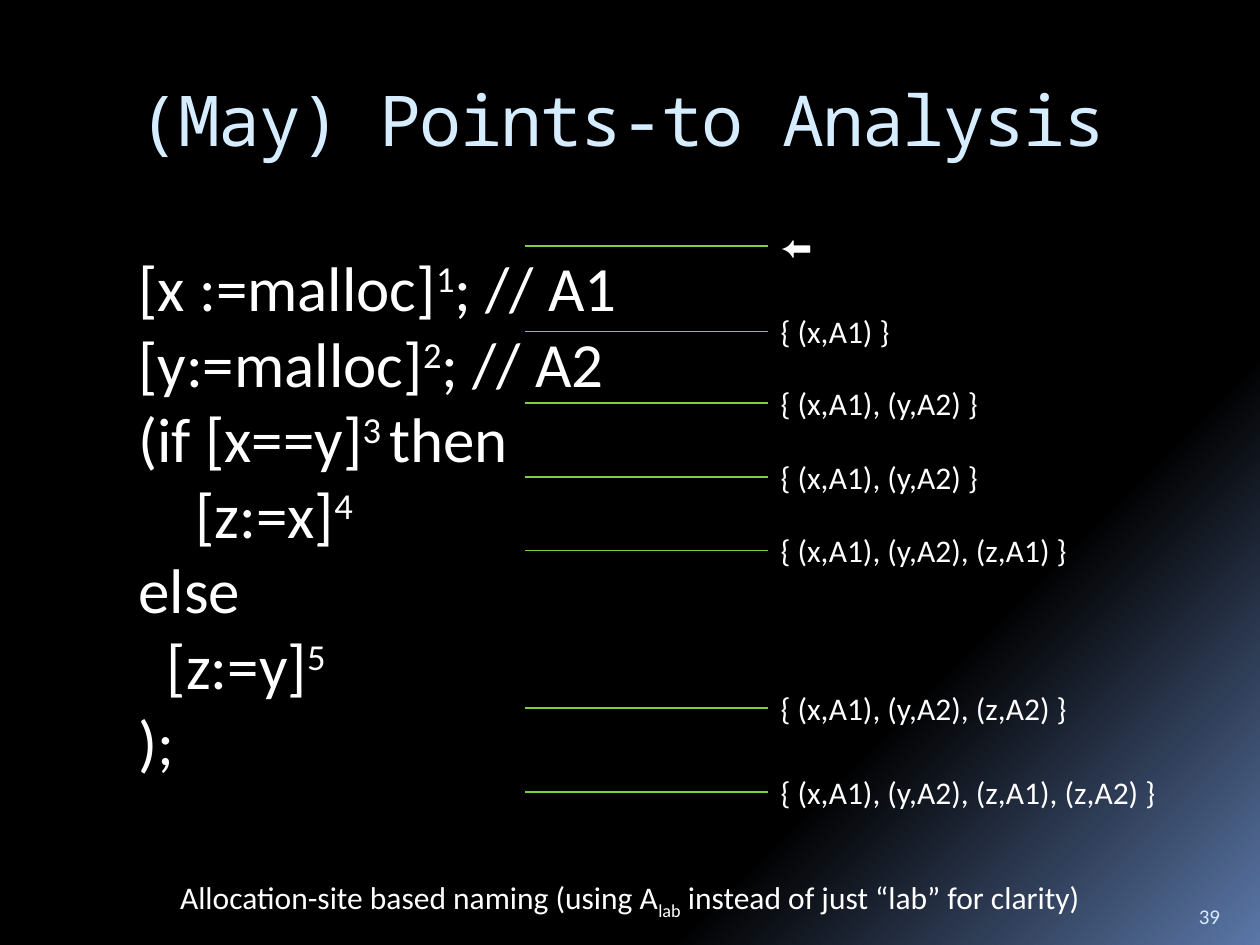
from pptx import Presentation
from pptx.dml.color import RGBColor
from pptx.enum.shapes import MSO_CONNECTOR as Connector
from pptx.enum.text import MSO_ANCHOR as Anchor, MSO_AUTO_SIZE as AutoSize
from pptx.oxml.ns import qn
from pptx.util import Pt
from lxml.etree import SubElement

WHITE, ICE, GREEN, BLACK, BLUE = "FFFFFF", "D6ECFF", "7FD13B", "000000", "5B77A8"
LINE_WIDTH = 139
LABEL_HEIGHT = 28.8


def color(value):
    return RGBColor.from_string(value)


def add_span(para, text, size=18, font="Calibri", fill=WHITE, baseline=0, spacing=0):
    span = para.add_run()
    span.text = text
    span.font.size = Pt(size)
    span.font.name = font
    span.font.color.rgb = color(fill)
    properties = span.font._element
    if baseline:
        properties.set("baseline", str(baseline * 1000))
    if spacing:
        properties.set("spc", str(spacing * 100))


def add_text(shapes, box, lines, wrap=True, grow=False, anchor=Anchor.TOP, **style):
    frame = shapes.add_textbox(*map(Pt, box)).text_frame
    frame.word_wrap = wrap
    frame.vertical_anchor = anchor
    frame.auto_size = AutoSize.SHAPE_TO_FIT_TEXT if grow else AutoSize.NONE
    for index, (indent, spans) in enumerate(lines):
        para = frame.paragraphs[0] if index == 0 else frame.add_paragraph()
        if indent:
            para._p.get_or_add_pPr().set("marL", str(Pt(indent)))
        for text, baseline in spans:
            add_span(para, text, baseline=baseline, **style)


def add_background(page):
    fill = page.background.fill
    fill.gradient()
    fill.gradient_angle = 315
    for stop, position, value in zip(fill.gradient_stops, (0.73, 1), (BLACK, BLUE)):
        stop.position = position
        stop.color.rgb = color(value)


def add_title(page, box):
    add_text(page.shapes, box, [(0, [("(May) Points-to Analysis", 0)])],
             size=40, font="Noto Sans Mono", fill=ICE, spacing=-1)


def add_page_number(page, box):
    add_text(page.shapes, box, [(0, [("39", 0)])],
             size=12, fill=ICE, anchor=Anchor.BOTTOM)


def add_program(page, box):
    statements = [
        (0, "[x :=malloc]", "1", "; // A1"),
        (0, "[y:=malloc]", "2", "; // A2"),
        (0, "(if [x==y]", "3 ", "then"),
        (32.5, "[z:=x]", "4", ""),
        (0, "else", "", ""),
        (16.25, "[z:=y]", "5", ""),
        (0, ");", "", ""),
    ]
    lines = [
        (indent, [(text, level) for text, level in zip(parts, (0, 30, 0)) if text])
        for indent, *parts in statements
    ]
    add_text(page.shapes, box, lines, grow=True, size=36)


def add_state(page, box, text):
    left, top, width, height = box
    group = page.shapes.add_group_shape()
    add_text(group.shapes, box, [(0, [(text, 0)])], wrap=False, grow=True)
    middle = top + height / 2
    line = group.shapes.add_connector(
        Connector.STRAIGHT, Pt(left), Pt(middle), Pt(left - LINE_WIDTH), Pt(middle))
    line.line.color.rgb = color(GREEN)
    line.line.width = Pt(0.94)
    SubElement(line._element.spPr, qn("a:effectLst"))


def add_states(page, left):
    states = [
        (126, 29, "⬅"),
        (175, 80, "{ (x,A1) }"),
        (216, 133, "{ (x,A1), (y,A2) }"),
        (258.1, 133, "{ (x,A1), (y,A2) }"),
        (300.2, 185.5, "{ (x,A1), (y,A2), (z,A1) }"),
        (390.2, 185.5, "{ (x,A1), (y,A2), (z,A2) }"),
        (438.2, 238.5, "{ (x,A1), (y,A2), (z,A1), (z,A2) }"),
    ]
    for top, width, text in states:
        add_state(page, (left, top, width, LABEL_HEIGHT), text)


def add_footnote(page, box):
    spans = [
        ("Allocation-site based naming (using A", 0),
        ("lab", -25),
        (" instead of just “lab” for clarity)", 0),
    ]
    add_text(page.shapes, box, [(0, spans)], wrap=False, grow=True)


def main():
    deck = Presentation()
    deck.slide_width, deck.slide_height = Pt(720), Pt(540)
    page = deck.slides.add_slide(deck.slide_layouts[6])
    add_background(page)
    add_title(page, (72, 40, 612, 72))
    add_page_number(page, (678, 505.5, 36, 28.8))
    add_program(page, (72, 138.5, 326, 312.5))
    add_states(page, 439)
    add_footnote(page, (95.8, 498.2, 541.5, LABEL_HEIGHT))
    deck.save("out.pptx")


if __name__ == "__main__":
    main()
